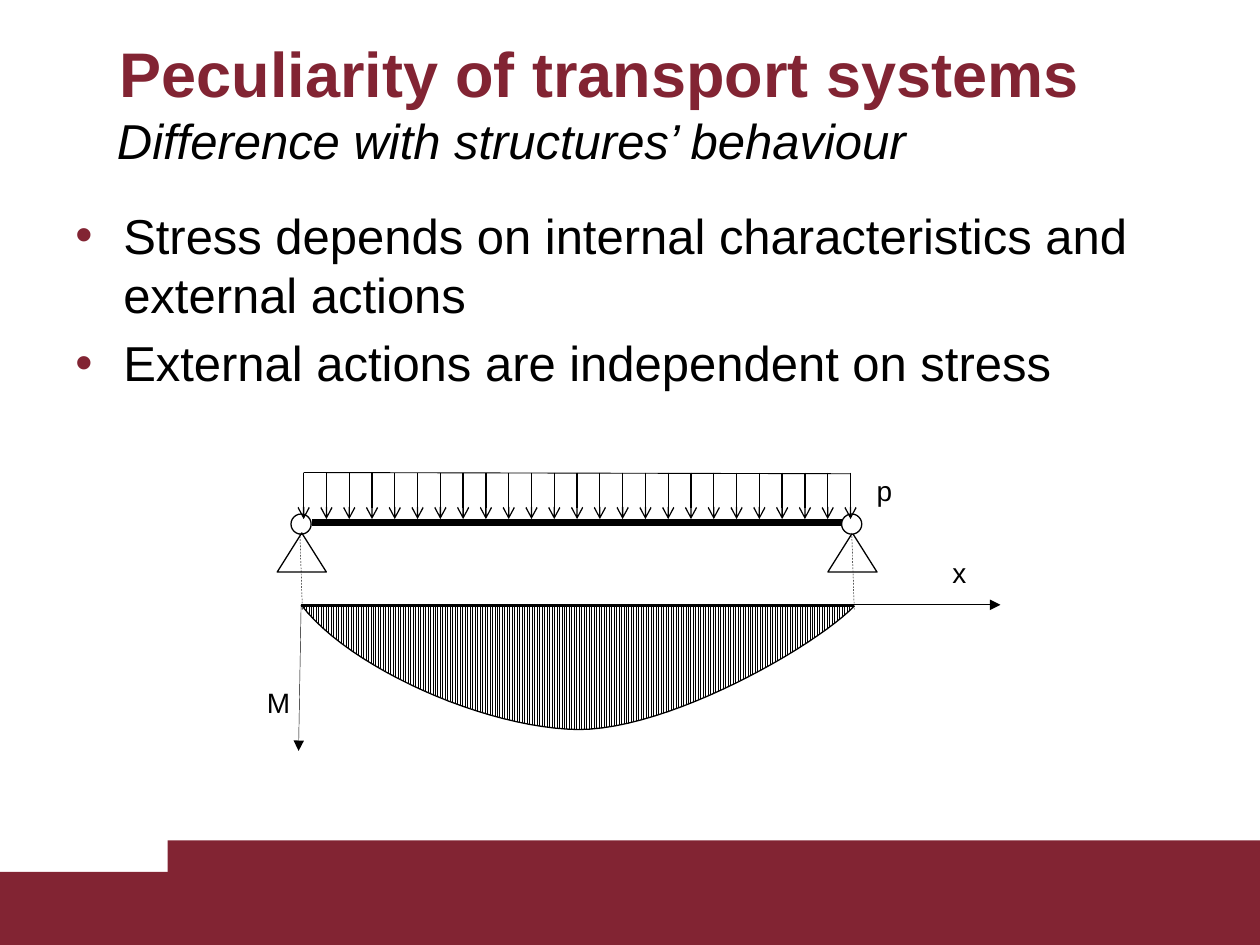
from dataclasses import dataclass

from lxml.etree import SubElement
from pptx import Presentation
from pptx.dml.color import RGBColor
from pptx.enum.dml import MSO_LINE, MSO_PATTERN
from pptx.enum.shapes import MSO_CONNECTOR, MSO_SHAPE
from pptx.enum.text import MSO_ANCHOR, PP_ALIGN
from pptx.oxml.ns import qn
from pptx.util import Inches, Pt


@dataclass(frozen=True)
class Theme:
    font: str = "Arial"
    accent: RGBColor = RGBColor(0x82, 0x24, 0x33)
    ink: RGBColor = RGBColor(0, 0, 0)
    paper: RGBColor = RGBColor(255, 255, 255)
    title: int = 36
    body: int = 28
    label: int = 16
    hairline: float = 0.25
    axis: float = 0.5
    outline: float = 0.75
    beam: float = 4


THEME = Theme()


def add_run(p, text, size, color=THEME.ink, bold=False, italic=False):
    r = p.add_run()
    r.text = text
    r.font.name, r.font.size = THEME.font, Pt(size)
    r.font.bold, r.font.italic = bold, italic
    r.font.color.rgb = color


def add_text_box(s, box, wrap=True):
    tf = s.shapes.add_textbox(*map(Inches, box)).text_frame
    tf.word_wrap = wrap
    return tf


def add_bullet(p, indent):
    pPr = p._p.get_or_add_pPr()
    pPr.set("marL", str(Inches(indent)))
    pPr.set("indent", str(-Inches(indent)))
    color = SubElement(SubElement(pPr, qn("a:buClr")), qn("a:srgbClr"))
    color.set("val", str(THEME.accent))
    SubElement(pPr, qn("a:buFont")).set("typeface", THEME.font)
    SubElement(pPr, qn("a:buChar")).set("char", "•")


def add_line(s, start, end, width, head=None, dash=None):
    line = s.shapes.add_connector(
        MSO_CONNECTOR.STRAIGHT, *map(Inches, (*start, *end)))
    line.line.color.rgb = THEME.ink
    line.line.width = Pt(width)
    if dash:
        line.line.dash_style = dash
    if head:
        SubElement(line.line._get_or_add_ln(), qn("a:tailEnd")).set("type", head)
    SubElement(line._element.spPr, qn("a:effectLst"))
    return line


def add_outlined(s, kind, box, fill=None):
    sp = s.shapes.add_shape(kind, *map(Inches, box))
    sp.shadow.inherit = False
    if fill is None:
        sp.fill.background()
    else:
        sp.fill.solid()
        sp.fill.fore_color.rgb = fill
    sp.line.color.rgb = THEME.ink
    sp.line.width = Pt(THEME.outline)


def add_footer(s, box):
    # Stepped band: a low full-width strip and a taller one from the notch on
    left, top, width, height = box
    notch, step = 1.33, 0.25
    for x, y in ((left, top + step), (left + notch, top)):
        sp = s.shapes.add_shape(
            MSO_SHAPE.RECTANGLE, Inches(x), Inches(y),
            Inches(left + width - x), Inches(top + height - y))
        sp.shadow.inherit = False
        sp.fill.solid()
        sp.fill.fore_color.rgb = THEME.accent
        sp.line.fill.background()


def add_title(s, box, text):
    sp = s.shapes.title
    sp.left, sp.top, sp.width, sp.height = map(Inches, box)
    tf = sp.text_frame
    tf.vertical_anchor = MSO_ANCHOR.TOP
    tf.margin_top = Inches(0.1)
    p = tf.paragraphs[0]
    p.alignment = PP_ALIGN.LEFT
    add_run(p, text, THEME.title, THEME.accent, bold=True)


def add_subtitle(s, box, text):
    p = add_text_box(s, box).paragraphs[0]
    add_run(p, text, THEME.body, italic=True)


def add_bullets(s, box, items):
    tf = add_text_box(s, box)
    for i, text in enumerate(items):
        p = tf.add_paragraph() if i else tf.paragraphs[0]
        add_bullet(p, 0.38)
        if i:
            p.space_before = Pt(0.2 * THEME.body)
        add_run(p, text, THEME.body)


def add_label(s, box, text):
    add_run(add_text_box(s, box, wrap=False).paragraphs[0], text, THEME.label)


def bezier(p0, p1, p2, p3, steps=24):
    for i in range(1, steps + 1):
        t = i / steps
        u = 1 - t
        yield tuple(u**3 * a + 3 * u * u * t * b + 3 * u * t * t * c + t**3 * d
                    for a, b, c, d in zip(p0, p1, p2, p3))


def add_beam(s, box):
    left, top, width, height = box
    right, beam_y = left + width, top + 0.4
    add_line(s, (left + 0.09, beam_y), (right + 0.05, beam_y), THEME.beam)

    # Supports: a hinge above a triangle at each end
    for x, fill in ((left, None), (right, THEME.paper)):
        add_outlined(s, MSO_SHAPE.ISOSCELES_TRIANGLE,
                     (x - 0.19, top + 0.48, 0.39, 0.31))
        add_outlined(s, MSO_SHAPE.OVAL,
                     (x - 0.08, top + 0.33, 0.16, 0.16), fill)

    # Uniform load
    count, first, last = 25, left + 0.02, right - 0.01
    gap = (last - first) / (count - 1)
    for i in range(count):
        x = first + i * gap
        add_line(s, (x, top), (x, top + 0.37), THEME.outline, "arrow")
    add_line(s, (first, top), (last, top + 0.01), THEME.axis)
    add_label(s, (right + 0.1, top - 0.04, 0.34, 0.37), "p")


def add_moment_diagram(s, box):
    left, top, width, height = box
    right, low = left + width, (left + 2.2, top + height)

    # Hatched bending moment curve
    start, end = (left, top), (right, top + 0.01)
    points = [
        *bezier(start, (left + 0.38, top + 0.5), (left + 1.46, low[1] - 0.01), low),
        *bezier(low, (left + 2.93, low[1]), (left + 4.08, top + 0.33), end)]
    fb = s.shapes.build_freeform(Inches(left), Inches(top))
    fb.add_line_segments(
        [(Inches(x), Inches(y)) for x, y in points], close=False)
    sp = fb.convert_to_shape()
    sp.shadow.inherit = False
    sp.fill.patterned()
    sp.fill.pattern = MSO_PATTERN.LIGHT_VERTICAL
    sp.fill.fore_color.rgb = THEME.ink
    sp.fill.back_color.rgb = THEME.paper
    sp.line.color.rgb = THEME.ink
    sp.line.width = Pt(THEME.outline)

    # Baseline, axes and dashed projections of the supports
    add_line(s, (left, top + 0.01), (right, top + 0.01), THEME.outline)
    add_line(s, (left, top), (left + 5.55, top), THEME.axis, "triangle")
    add_line(s, (left, top), (left - 0.02, top + 1.16), THEME.hairline, "triangle")
    for x in (left, right - 0.01):
        add_line(s, (x - 0.01, top - 0.57), (x + 0.01, top + 0.04),
                 THEME.hairline, dash=MSO_LINE.DASH)
    add_label(s, (left + 5.07, top - 0.44, 0.31, 0.37), "x")
    add_label(s, (left - 0.37, top + 0.59, 0.39, 0.37), "M")


def main():
    prs = Presentation()
    prs.slide_width, prs.slide_height = Inches(10), Inches(7.5)
    s = prs.slides.add_slide(prs.slide_layouts[5])
    add_footer(s, (0, 6.67, 10, 0.83))
    add_title(s, (0.85, 0.17, 8.41, 0.55), "Peculiarity of transport systems")
    add_subtitle(s, (0.83, 0.83, 8.83, 0.57),
                 "Difference with structures’ behaviour")
    add_bullets(s, (0.5, 1.58, 8.58, 2.32), (
        "Stress depends on internal characteristics and external actions",
        "External actions are independent on stress"))
    add_beam(s, (2.39, 3.75, 4.37, 1.04))
    add_moment_diagram(s, (2.39, 4.8, 4.39, 0.99))
    prs.save("out.pptx")


if __name__ == "__main__":
    main()
